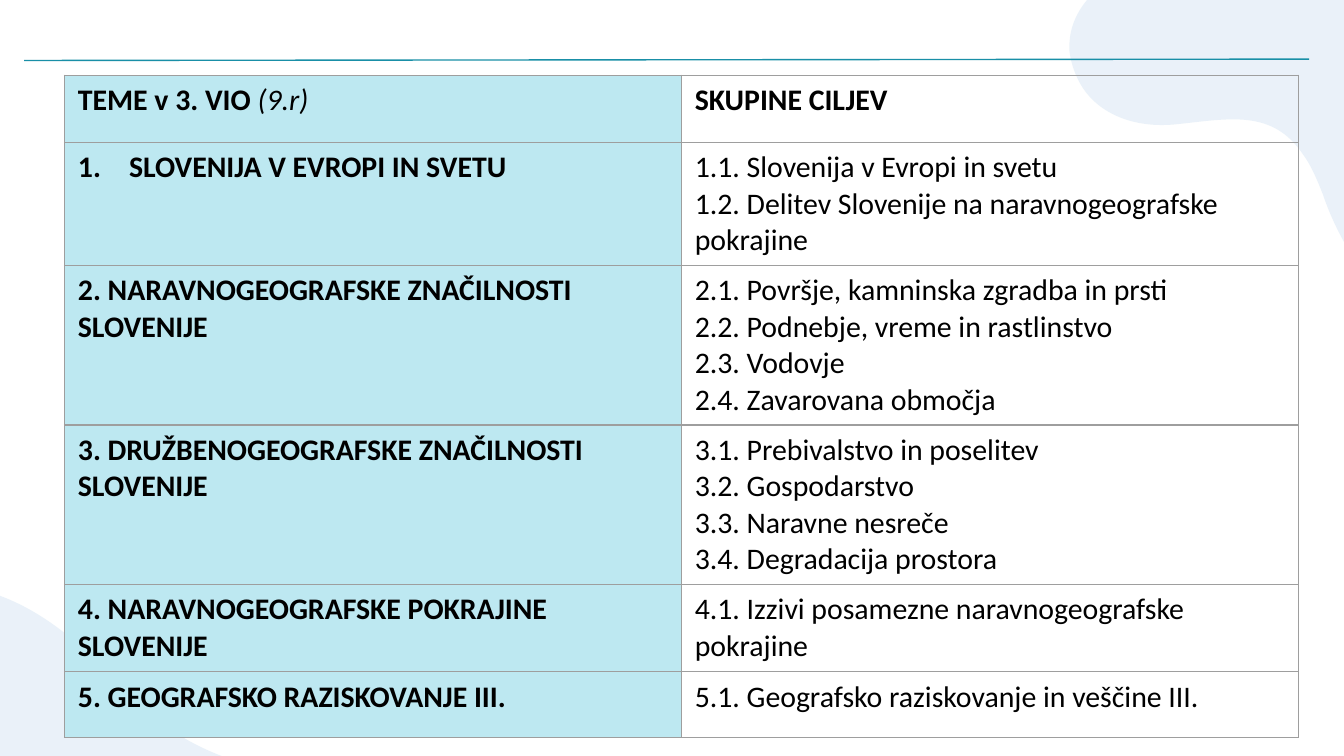
import math

import lxml.etree
import pptx
import pptx.dml.color
import pptx.enum.shapes
import pptx.oxml
import pptx.oxml.ns
import pptx.util

PX = 9144  # EMU per px, at 100 px to the inch
SLIDE_WIDTH = 1000
COLORS = {"blob": "CDE0F1", "theme": "BDE8F1", "border": "9E9E9E",
          "rule": "198FA7", "text": "000000"}
FONT, FONT_SIZE = "Calibri", 16
BLOB_OPACITY = 42

HEADER = ("TEME v 3. VIO ", "(9.r)", "SKUPINE CILJEV")
THEMES = [
    ("SLOVENIJA V EVROPI IN SVETU",
     ["1.1. Slovenija v Evropi in svetu",
      "1.2. Delitev Slovenije na naravnogeografske pokrajine"]),
    ("2. NARAVNOGEOGRAFSKE ZNAČILNOSTI SLOVENIJE",
     ["2.1. Površje, kamninska zgradba in prsti",
      "2.2. Podnebje, vreme in rastlinstvo",
      "2.3. Vodovje",
      "2.4. Zavarovana območja"]),
    ("3. DRUŽBENOGEOGRAFSKE ZNAČILNOSTI SLOVENIJE",
     ["3.1. Prebivalstvo in poselitev",
      "3.2. Gospodarstvo",
      "3.3. Naravne nesreče",
      "3.4. Degradacija prostora"]),
    ("4. NARAVNOGEOGRAFSKE POKRAJINE SLOVENIJE",
     ["4.1. Izzivi posamezne naravnogeografske pokrajine"]),
    ("5. GEOGRAFSKO RAZISKOVANJE III.",
     ["5.1. Geografsko raziskovanje in veščine III."]),
]
TABLE_LEFT, TABLE_TOP, COLUMN_WIDTH = 48, 56, 459
ROW_HEIGHTS = [50, 89, 115, 115, 65, 49]
RULE = (18, 45, 974, 44)

BLOB_SIZE = (475, 434)
BLOBS = [(-175, 454, 9.3), (809, -185, 55.5)]  # left, top, rotation
# Bezier outline as it lies in the first blob: start, then two controls and an end.
BLOB_START = (-24, 437)
BLOB_CURVES = [
    [(-56, 432), (-83, 440), (-102, 456)], [(-136, 483), (-156, 534), (-120, 620)],
    [(-96, 679), (-103, 711), (-118, 763)], [(-132, 814), (-126, 839), (-107, 856)],
    [(-99, 862), (-90, 866), (-80, 868)], [(-58, 872), (-32, 862), (-12, 836)],
    [(12, 805), (29, 777), (69, 784)], [(78, 785), (89, 789), (101, 794)],
    [(118, 802), (135, 807), (150, 810)], [(195, 817), (233, 804), (257, 772)],
    [(291, 730), (307, 648), (258, 604)], [(208, 560), (154, 584), (82, 503)],
    [(45, 462), (8, 442), (-24, 437)],
]


def rgb(name):
    return pptx.dml.color.RGBColor.from_string(COLORS[name])


def upright(point):
    """Turn an outline point back to the unrotated blob box, in EMU."""
    left, top, angle = BLOBS[0]
    width, height = BLOB_SIZE
    x, y = point[0] - left - width / 2, point[1] - top - height / 2
    cos, sin = math.cos(math.radians(angle)), math.sin(math.radians(angle))
    return (round((x * cos + y * sin + width / 2) * PX),
            round((y * cos - x * sin + height / 2) * PX))


def curved_outline():
    """Build the a:path element of the blob."""
    def points(corners):
        return "".join('<a:pt x="%d" y="%d"/>' % upright(corner) for corner in corners)

    curves = "".join(f"<a:cubicBezTo>{points(curve)}</a:cubicBezTo>"
                     for curve in BLOB_CURVES)
    width, height = (side * PX for side in BLOB_SIZE)
    return pptx.oxml.parse_xml(
        f'<a:path {pptx.oxml.ns.nsdecls("a")} w="{width}" h="{height}">'
        f"<a:moveTo>{points([BLOB_START])}</a:moveTo>{curves}<a:close/></a:path>")


def add_blob(page, left, top, rotation):
    builder = page.shapes.build_freeform(*upright(BLOB_START), scale=1.0)
    builder.add_line_segments([upright(curve[-1]) for curve in BLOB_CURVES])
    blob = builder.convert_to_shape()
    straight = blob._element.spPr.find(".//" + pptx.oxml.ns.qn("a:path"))
    straight.getparent().replace(straight, curved_outline())
    blob.left, blob.top = left * PX, top * PX
    blob.width, blob.height = (side * PX for side in BLOB_SIZE)
    blob.rotation = rotation
    blob.shadow.inherit = False
    blob.line.fill.background()
    blob.fill.solid()
    blob.fill.fore_color.rgb = rgb("blob")
    color = blob._element.spPr.find(".//" + pptx.oxml.ns.qn("a:srgbClr"))
    lxml.etree.SubElement(color, pptx.oxml.ns.qn("a:alpha"),
                          val=str(BLOB_OPACITY * 1000))


def add_borders(cell):
    properties = cell._tc.get_or_add_tcPr()
    for side in ("lnL", "lnR", "lnT", "lnB"):
        properties.append(pptx.oxml.parse_xml(
            f'<a:{side} {pptx.oxml.ns.nsdecls("a")} w="9525"><a:solidFill>'
            f'<a:srgbClr val="{COLORS["border"]}"/></a:solidFill></a:{side}>'))


def add_number(para):
    """Number the paragraph with a hanging indent."""
    properties = para._p.get_or_add_pPr()
    properties.set("marL", str(38 * PX))
    properties.set("indent", str(-38 * PX))
    lxml.etree.SubElement(properties, pptx.oxml.ns.qn("a:buAutoNum"),
                          type="arabicPeriod")


def fill_cell(cell, lines, bold, shaded):
    """Write lines, each a list of spans."""
    add_borders(cell)
    if shaded:
        cell.fill.solid()
        cell.fill.fore_color.rgb = rgb("theme")
    else:
        cell.fill.background()
    frame = cell.text_frame
    for index, spans in enumerate(lines):
        para = frame.paragraphs[0] if index == 0 else frame.add_paragraph()
        for text in spans:
            span = para.add_run()
            span.text = text
            span.font.name = FONT
            span.font.size = pptx.util.Pt(FONT_SIZE)
            span.font.bold = bold
            span.font.color.rgb = rgb("text")


def add_themes_table(page):
    table = page.shapes.add_table(
        len(ROW_HEIGHTS), 2, TABLE_LEFT * PX, TABLE_TOP * PX,
        2 * COLUMN_WIDTH * PX, sum(ROW_HEIGHTS) * PX).table
    table.first_row = table.horz_banding = False
    for row, height in zip(table.rows, ROW_HEIGHTS):
        row.height = height * PX
    title, grade, goals_title = HEADER
    fill_cell(table.cell(0, 0), [[title, grade]], True, True)
    grade_span = table.cell(0, 0).text_frame.paragraphs[0].runs[1]
    grade_span.font.bold, grade_span.font.italic = False, True
    fill_cell(table.cell(0, 1), [[goals_title]], True, False)
    for row, (theme, goals) in enumerate(THEMES, start=1):
        fill_cell(table.cell(row, 0), [[theme]], True, True)
        fill_cell(table.cell(row, 1), [[goal] for goal in goals], False, False)
    add_number(table.cell(1, 0).text_frame.paragraphs[0])


def add_rule(page):
    rule = page.shapes.add_connector(pptx.enum.shapes.MSO_CONNECTOR.STRAIGHT,
                                     *(value * PX for value in RULE))
    rule.line.color.rgb = rgb("rule")
    rule.line.width = pptx.util.Pt(0.75)
    lxml.etree.SubElement(rule._element.spPr, pptx.oxml.ns.qn("a:effectLst"))


def main():
    deck = pptx.Presentation()
    deck.slide_width = SLIDE_WIDTH * PX
    deck.slide_height = deck.slide_width * 9 // 16
    page = deck.slides.add_slide(deck.slide_layouts.get_by_name("Blank"))
    for left, top, rotation in BLOBS:
        add_blob(page, left, top, rotation)
    add_themes_table(page)
    add_rule(page)
    deck.save("out.pptx")


if __name__ == "__main__":
    main()
